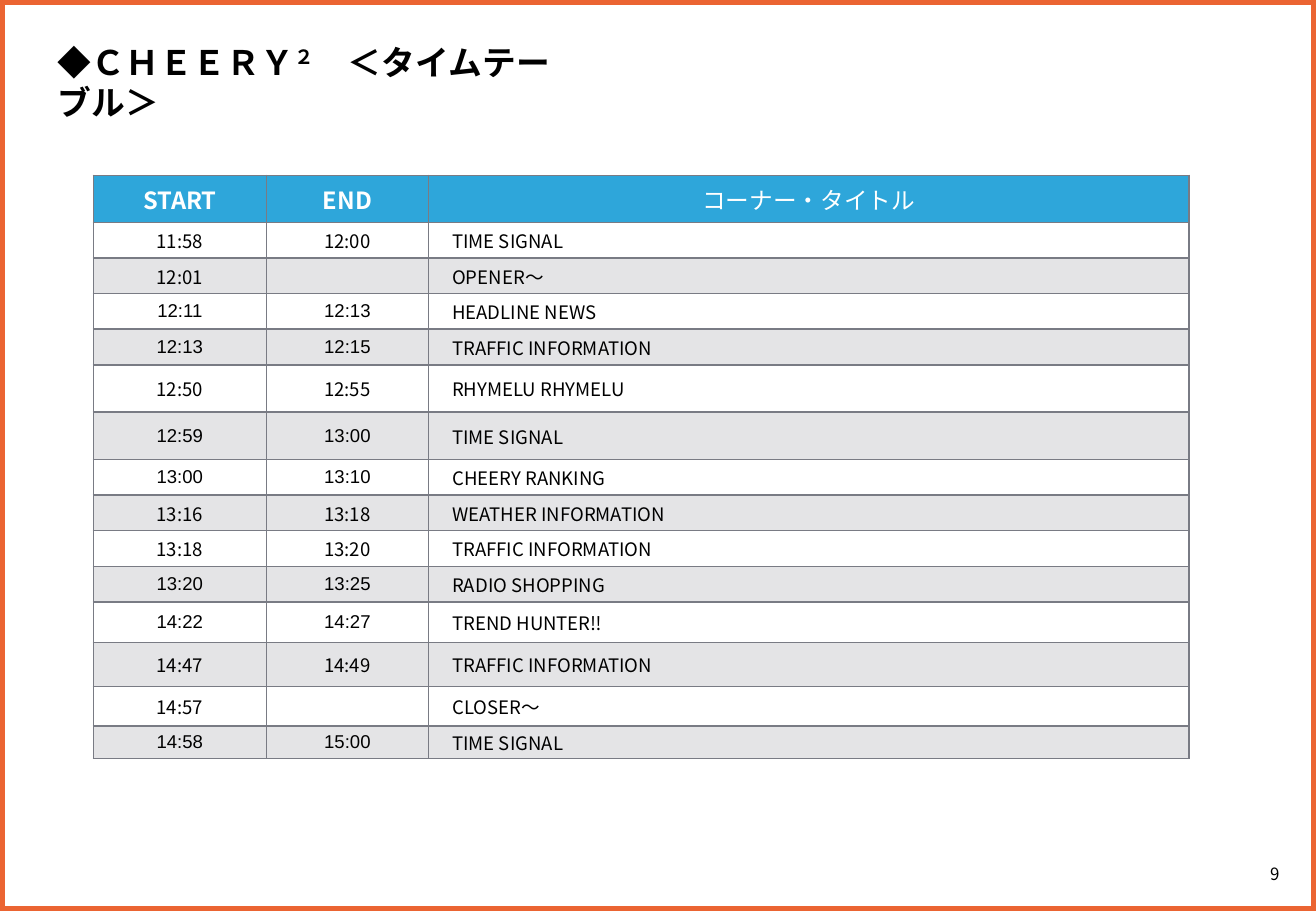
from pptx import Presentation
from pptx.dml.color import RGBColor
from pptx.enum.shapes import MSO_SHAPE as Shape
from pptx.enum.text import MSO_ANCHOR as Anchor, MSO_AUTO_SIZE as AutoSize, PP_ALIGN as Align
from pptx.oxml.ns import qn
from pptx.util import Pt
from lxml import etree

COLORS = {"frame": "EB6432", "header": "2EA6DA", "gray": "797B84",
          "white": "FFFFFF", "black": "000000"}
NOTO, ARIAL = "Noto Sans CJK JP", "Arial"


def add_run(paragraph, text, size, font=NOTO, color="black", bold=False):
    run = paragraph.add_run()
    run.text = text
    run.font.size = Pt(size)
    run.font.bold = bold
    run.font.color.rgb = RGBColor.from_string(COLORS[color])
    run.font.name = font
    etree.SubElement(run.font._element, qn("a:ea"), typeface=NOTO)
    return run


def add_borders(cell):
    properties = cell._tc.get_or_add_tcPr()
    for position, side in enumerate(("lnL", "lnR", "lnT", "lnB")):
        line = etree.Element(qn(f"a:{side}"), w=str(Pt(1)))
        fill = etree.SubElement(line, qn("a:solidFill"))
        etree.SubElement(fill, qn("a:srgbClr"), val=COLORS["gray"])
        properties.insert(position, line)


presentation = Presentation()
presentation.slide_width, presentation.slide_height = Pt(780), Pt(540)
slide = presentation.slides.add_slide(presentation.slide_layouts[5])

frame = slide.shapes.add_shape(Shape.RECTANGLE, 0, 0, Pt(780), Pt(540))
frame.shadow.inherit = False
frame.fill.background()
frame.line.color.rgb = RGBColor.from_string(COLORS["frame"])
frame.line.width = Pt(6)

title = slide.shapes.title
title.left, title.top, title.width, title.height = Pt(27), Pt(20.9), Pt(311.8), Pt(31.7)
title.text_frame.word_wrap = True
title.text_frame.auto_size = AutoSize.NONE
title.text_frame.vertical_anchor = Anchor.TOP
paragraph = title.text_frame.paragraphs[0]
paragraph.alignment = Align.LEFT
for text, bold, baseline in (("◆", False, 0), ("ＣＨＥＥＲＹ", True, 0),
                             ("２", True, 30000), ("　＜タイムテーブル＞", True, 0)):
    run = add_run(paragraph, text, 20, bold=bold)
    if baseline:
        run.font._element.set("baseline", str(baseline))

number = slide.shapes.add_textbox(Pt(731.5), Pt(505.4), Pt(48.2), Pt(25.2))
number.text_frame.word_wrap = True
number.text_frame.vertical_anchor = Anchor.MIDDLE
paragraph = number.text_frame.paragraphs[0]
paragraph.alignment = Align.CENTER
add_run(paragraph, "9", 10)

header = (("START", NOTO, True), ("END", NOTO, True), ("コーナー・タイトル", ARIAL, False))
programme = (
    ("11:58", "12:00", "TIME SIGNAL", NOTO, 21.1),
    ("12:01", "", "OPENER〜", NOTO, 21.1),
    ("12:11", "12:13", "HEADLINE NEWS", ARIAL, 21.1),
    ("12:13", "12:15", "TRAFFIC INFORMATION", ARIAL, 21.1),
    ("12:50", "12:55", "RHYMELU RHYMELU", NOTO, 28.1),
    ("12:59", "13:00", "TIME SIGNAL", ARIAL, 28.1),
    ("13:00", "13:10", "CHEERY RANKING", ARIAL, 21.1),
    ("13:16", "13:18", "WEATHER INFORMATION", NOTO, 21.1),
    ("13:18", "13:20", "TRAFFIC INFORMATION", NOTO, 21.1),
    ("13:20", "13:25", "RADIO SHOPPING", ARIAL, 21.1),
    ("14:22", "14:27", "TREND HUNTER‼", ARIAL, 24.2),
    ("14:47", "14:49", "TRAFFIC INFORMATION", NOTO, 25.9),
    ("14:57", "", "CLOSER〜", NOTO, 23.5),
    ("14:58", "15:00", "TIME SIGNAL", ARIAL, 19.4),
)
heights = [28] + [entry[4] for entry in programme]
timetable = slide.shapes.add_table(len(heights), 3, Pt(55.4), Pt(103.9), Pt(649.4), Pt(sum(heights))).table
for column, width in zip(timetable.columns, (102.5, 96.2, 450.7)):
    column.width = Pt(width)
for row, height in zip(timetable.rows, heights):
    row.height = Pt(height)

for row_index in range(len(heights)):
    for column_index in range(3):
        cell = timetable.cell(row_index, column_index)
        cell.margin_left = cell.margin_right = cell.margin_top = cell.margin_bottom = 0
        cell.vertical_anchor = Anchor.MIDDLE
        paragraph = cell.text_frame.paragraphs[0]
        paragraph.alignment = Align.CENTER
        if row_index == 0:
            text, font, bold = header[column_index]
            add_run(paragraph, text, 14, font, "white", bold)
            cell.fill.solid()
            cell.fill.fore_color.rgb = RGBColor.from_string(COLORS["header"])
        else:
            entry = programme[row_index - 1]
            font = entry[3]
            if column_index == 2:
                font = NOTO
                paragraph.alignment = Align.LEFT
                cell.margin_left = Pt(14)
            if entry[column_index]:
                add_run(paragraph, entry[column_index], 11, font)
            else:
                etree.SubElement(paragraph._p, qn("a:endParaRPr"), sz="1100")
            if row_index % 2:
                cell.fill.background()
            else:
                cell.fill.solid()
                cell.fill.fore_color.rgb = RGBColor.from_string(COLORS["gray"])
                color = cell._tc.tcPr.find(".//" + qn("a:srgbClr"))
                etree.SubElement(color, qn("a:alpha"), val="20000")
        add_borders(cell)

presentation.save("out.pptx")
